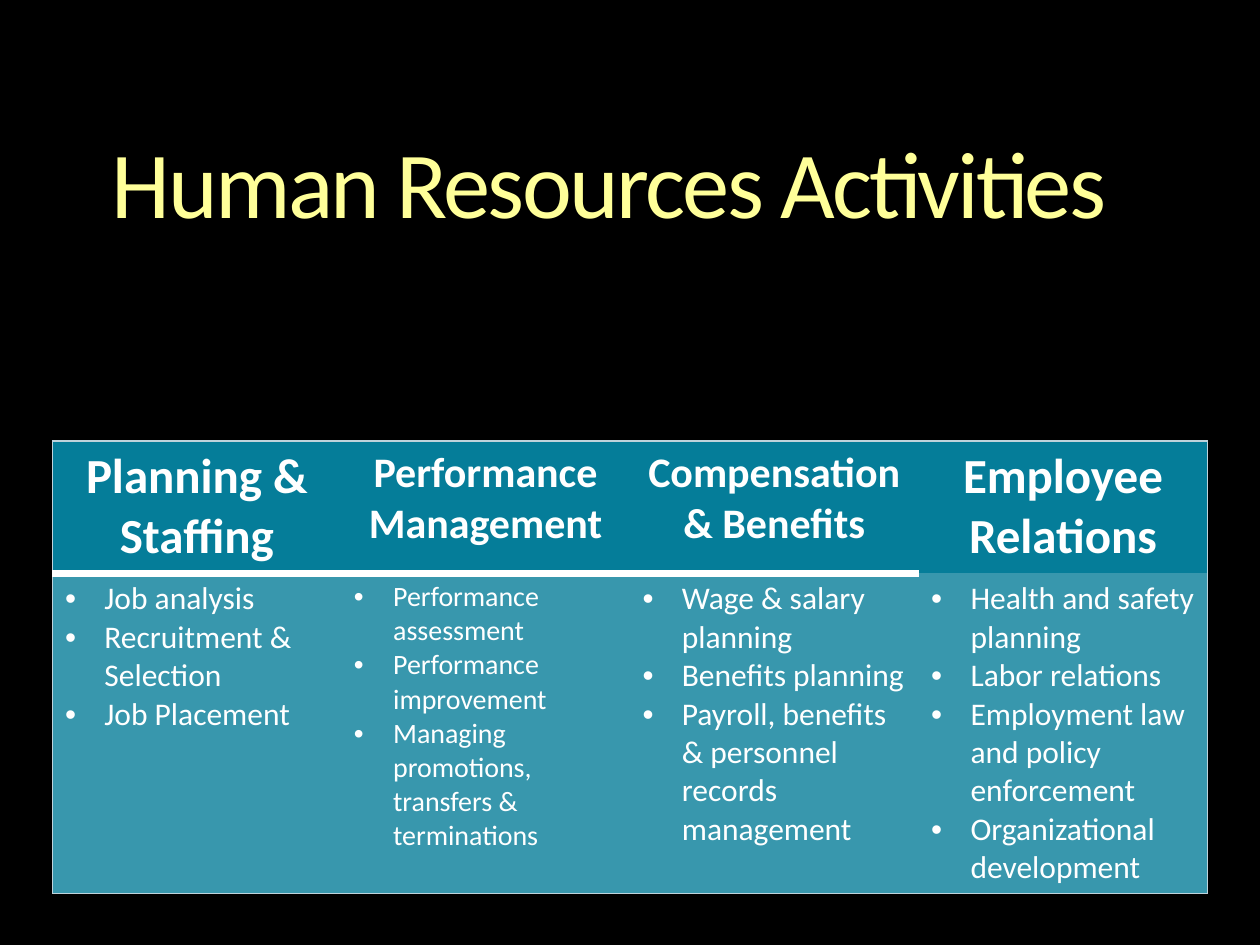
import pptx
import pptx.dml.color
import pptx.enum.text
import pptx.util
from pptx.oxml.ns import qn
from lxml import etree

Pt = pptx.util.Pt
RGBColor = pptx.dml.color.RGBColor
PP_ALIGN = pptx.enum.text.PP_ALIGN

BLACK = RGBColor(0x00, 0x00, 0x00)
WHITE = RGBColor(0xFF, 0xFF, 0xFF)
PALE_YELLOW = RGBColor(0xFF, 0xFF, 0x99)
TEAL = RGBColor(0x05, 0x7D, 0x99)
LIGHT_TEAL = RGBColor(0x38, 0x97, 0xAD)
FRAME = RGBColor(0xBF, 0xD3, 0xDB)

FONT = "Calibri"
NO_GRID_STYLE = "{2D5ABB26-0587-4C30-8999-92F81FD0307C}"
BULLET_INDENT = Pt(22.5)
COLUMN_WIDTH = 165
HEADER_HEIGHT, BODY_HEIGHT = 75, 182

# heading, heading size, activities, activity size
ACTIVITY_GROUPS = [
    ("Planning & Staffing", 28,
     ["Job analysis", "Recruitment & Selection", "Job Placement"], 18),
    ("Performance Management", 24,
     ["Performance assessment", "Performance improvement",
      "Managing promotions, transfers & terminations"], 16),
    ("Compensation & Benefits", 24,
     ["Wage & salary planning", "Benefits planning",
      "Payroll, benefits & personnel records management"], 18),
    ("Employee Relations", 28,
     ["Health and safety planning", "Labor relations",
      "Employment law and policy enforcement",
      "Organizational development"], 18),
]


def add_run(paragraph, text, size, color, bold=False):
    run = paragraph.add_run()
    run.text = text
    run.font.name = FONT
    run.font.size = Pt(size)
    run.font.bold = bold
    run.font.color.rgb = color
    return run


def add_bullet(paragraph):
    properties = paragraph._p.get_or_add_pPr()
    properties.set("marL", str(BULLET_INDENT))
    properties.set("indent", str(-BULLET_INDENT))
    etree.SubElement(properties, qn("a:buFont")).set("typeface", "Arial")
    etree.SubElement(properties, qn("a:buChar")).set("char", "•")


def set_borders(cell, borders):
    """Draw borders given as {side: (colour, width)}, sides being L, R, T, B."""
    properties = cell._tc.get_or_add_tcPr()
    for side in "LRTB":
        if side in borders:
            color, width = borders[side]
            line = etree.SubElement(properties, qn(f"a:ln{side}"), w=str(Pt(width)))
            fill = etree.SubElement(line, qn("a:solidFill"))
            etree.SubElement(fill, qn("a:srgbClr"), val=str(color))


def fill_cell(cell, color):
    cell.fill.solid()
    cell.fill.fore_color.rgb = color


def add_title(slide, text):
    title = slide.shapes.title
    title.left, title.top, title.width, title.height = Pt(18), Pt(78), Pt(660), Pt(59)
    frame = title.text_frame
    frame.margin_left = frame.margin_right = frame.margin_top = frame.margin_bottom = 0
    frame.auto_size = pptx.enum.text.MSO_AUTO_SIZE.NONE
    frame.word_wrap = True
    paragraph = frame.paragraphs[0]
    paragraph.alignment = PP_ALIGN.CENTER
    paragraph.line_spacing = 0.9
    run = add_run(paragraph, text, 54, PALE_YELLOW)
    run.font._element.set("spc", "-150")


def write_heading(cell, heading, size):
    paragraph = cell.text_frame.paragraphs[0]
    paragraph.alignment = PP_ALIGN.CENTER
    add_run(paragraph, heading, size, WHITE, bold=True)


def write_activities(cell, activities, size):
    frame = cell.text_frame
    for index, activity in enumerate(activities):
        paragraph = frame.add_paragraph() if index else frame.paragraphs[0]
        add_bullet(paragraph)
        add_run(paragraph, activity, size, WHITE)


def add_activity_table(slide):
    count = len(ACTIVITY_GROUPS)
    frame = slide.shapes.add_table(
        2, count, Pt(30), Pt(252),
        Pt(COLUMN_WIDTH * count), Pt(HEADER_HEIGHT + BODY_HEIGHT))
    table = frame.table
    table.horz_banding = False
    table._tbl.tblPr.find(qn("a:tableStyleId")).text = NO_GRID_STYLE
    table.rows[0].height = Pt(HEADER_HEIGHT)
    table.rows[1].height = Pt(BODY_HEIGHT)

    thin, thick = (FRAME, 0.75), (WHITE, 5)
    last = count - 1
    for column, (heading, heading_size, activities, size) in enumerate(ACTIVITY_GROUPS):
        table.columns[column].width = Pt(COLUMN_WIDTH)
        header, body = table.cell(0, column), table.cell(1, column)
        write_heading(header, heading, heading_size)
        write_activities(body, activities, size)

        sides = {0: {"L": thin}, last: {"R": thin}}.get(column, {})
        rule = {} if column == last else {"B": thick}
        set_borders(header, {**sides, "T": thin, **rule})
        set_borders(body, {**sides, "B": thin})
        fill_cell(header, TEAL)
        fill_cell(body, LIGHT_TEAL)


def main():
    presentation = pptx.Presentation()
    presentation.slide_width, presentation.slide_height = Pt(720), Pt(540)
    slide = presentation.slides.add_slide(presentation.slide_layouts[5])
    slide.background.fill.solid()
    slide.background.fill.fore_color.rgb = BLACK
    add_title(slide, "Human Resources Activities")
    add_activity_table(slide)
    presentation.save("out.pptx")


if __name__ == "__main__":
    main()
